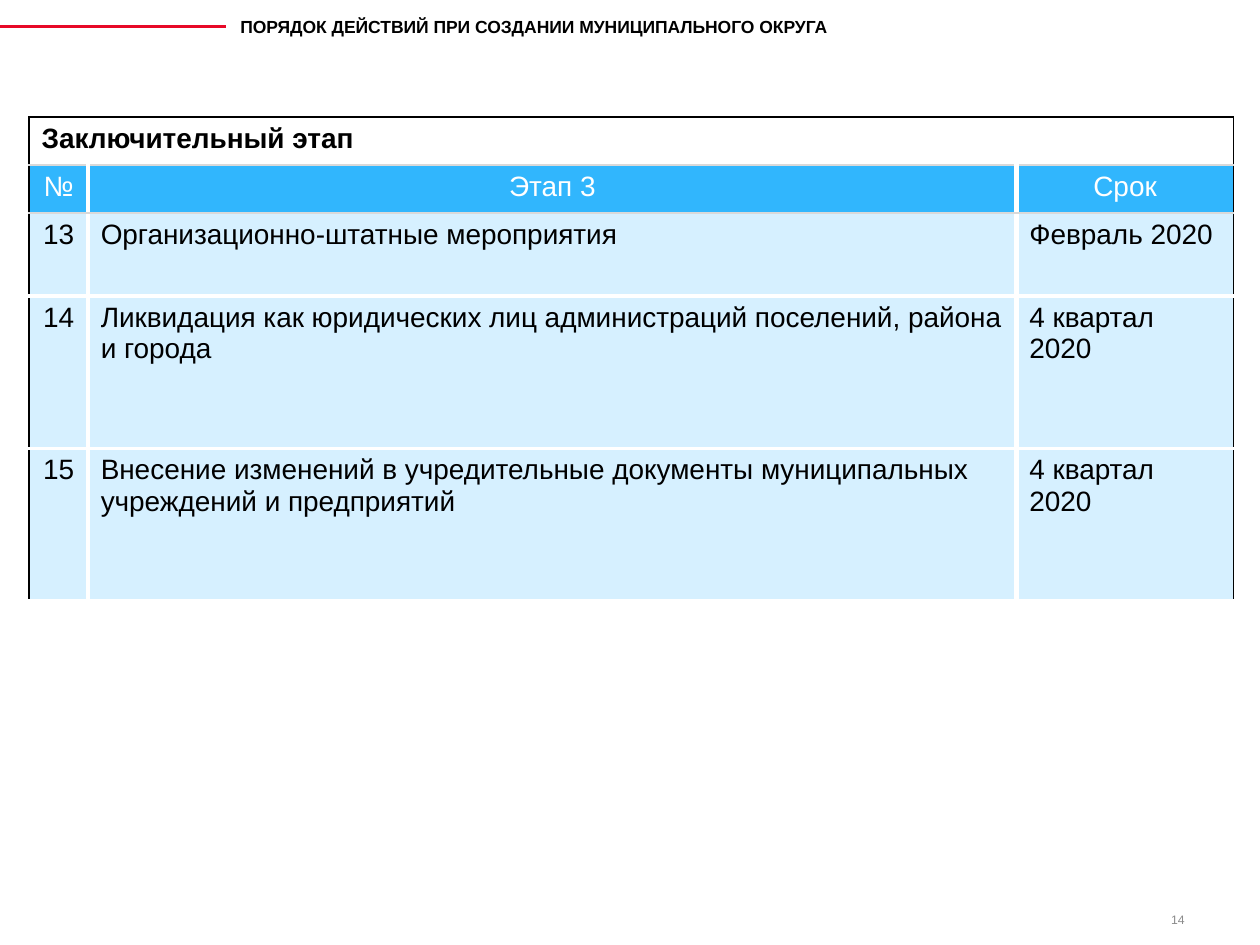
from lxml import etree
from pptx import Presentation, util as u
from pptx.dml.color import RGBColor
from pptx.enum import shapes, text
from pptx.oxml import ns

WIDTH, HEIGHT = 10, 7.5
BLACK, WHITE, GREY, RED = "000000", "FFFFFF", "D9D9D9", "E70927"
BLUE, PALE = "31B6FD", "D6F0FF"
LEFT, CENTER, RIGHT = text.PP_ALIGN.LEFT, text.PP_ALIGN.CENTER, text.PP_ALIGN.RIGHT


def write(frame, words, size=16, color=BLACK, bold=False, align=LEFT):
    para = frame.paragraphs[0]
    para.alignment = align
    span = para.add_run()
    span.text = words
    span.font.name, span.font.size, span.font.bold = "Arial", u.Pt(size), bold
    span.font.color.rgb = RGBColor.from_string(color)


def add_border(cell, side, color, width):
    line = etree.SubElement(cell._tc.get_or_add_tcPr(), ns.qn("a:ln" + side),
                            w=str(u.Pt(width)))
    fill = etree.SubElement(line, ns.qn("a:solidFill"))
    etree.SubElement(fill, ns.qn("a:srgbClr"), val=color)


deck = Presentation()
deck.slide_width, deck.slide_height = u.Inches(WIDTH), u.Inches(HEIGHT)
page = deck.slides.add_slide(deck.slide_layouts[6])

# Heading with the red rule before it
box = page.shapes.add_textbox(u.Inches(1.81), u.Inches(0.08), u.Inches(4.87), u.Inches(0.26))
box.text_frame.word_wrap = False
write(box.text_frame, "ПОРЯДОК ДЕЙСТВИЙ ПРИ СОЗДАНИИ МУНИЦИПАЛЬНОГО ОКРУГА", size=10, bold=True)

rule = page.shapes.add_connector(shapes.MSO_CONNECTOR.STRAIGHT, u.Inches(-0.42),
                                 u.Inches(0.21), u.Inches(1.79), u.Inches(0.21))
rule.line.color.rgb = RGBColor.from_string(RED)
rule.line.width = u.Pt(1.5)
etree.SubElement(rule._element.spPr, ns.qn("a:effectLst"))

# Table of the final stage
rows = [
    ("Заключительный этап", "", ""),
    ("№", "Этап 3", "Срок"),
    ("13", "Организационно-штатные мероприятия", "Февраль 2020"),
    ("14", "Ликвидация как юридических лиц администраций поселений, района и города",
     "4 квартал 2020"),
    ("15", "Внесение изменений в учредительные документы муниципальных "
           "учреждений и предприятий", "4 квартал 2020"),
]
column_widths = [0.47, 7.37, 1.72]
row_heights = [0.38, 0.38, 0.66, 1.21, 1.21]
table = page.shapes.add_table(len(rows), len(column_widths), u.Inches(0.23), u.Inches(0.93),
                              u.Inches(sum(column_widths)),
                              u.Inches(sum(row_heights))).table
table.first_row = table.horz_banding = False
for column, width in zip(table.columns, column_widths):
    column.width = u.Inches(width)
for row, height in zip(table.rows, row_heights):
    row.height = u.Inches(height)
table.cell(0, 0).merge(table.cell(0, 2))

# Horizontal borders from the top edge to the bottom edge
outer, gap = (BLACK, 1), (WHITE, 3)
levels = [outer, (GREY, 0.96), (GREY, 0.96)] + [(WHITE, 2.21)] * 3
fills = [WHITE, BLUE, PALE, PALE, PALE]

for r, entries in enumerate(rows):
    for c, words in enumerate(entries):
        cell = table.cell(r, c)
        add_border(cell, "L", *(outer if r == 0 or c == 0 else gap))
        add_border(cell, "R", *(outer if r == 0 or c == 2 else gap))
        add_border(cell, "T", *levels[r])
        add_border(cell, "B", *levels[r + 1])
        cell.fill.solid()
        cell.fill.fore_color.rgb = RGBColor.from_string(fills[r])
        if words:
            centred = r == 1 or (r > 1 and c == 0)
            write(cell.text_frame, words, bold=r == 0, color=WHITE if r == 1 else BLACK,
                  align=CENTER if centred else LEFT)

# Page number
box = page.shapes.add_textbox(u.Inches(7.17), u.Inches(7.18), u.Inches(2.33), u.Inches(0.24))
box.text_frame.word_wrap = True
box.text_frame.vertical_anchor = text.MSO_ANCHOR.MIDDLE
write(box.text_frame, "14", size=7, color="8B8B8B", align=RIGHT)

deck.save("out.pptx")
